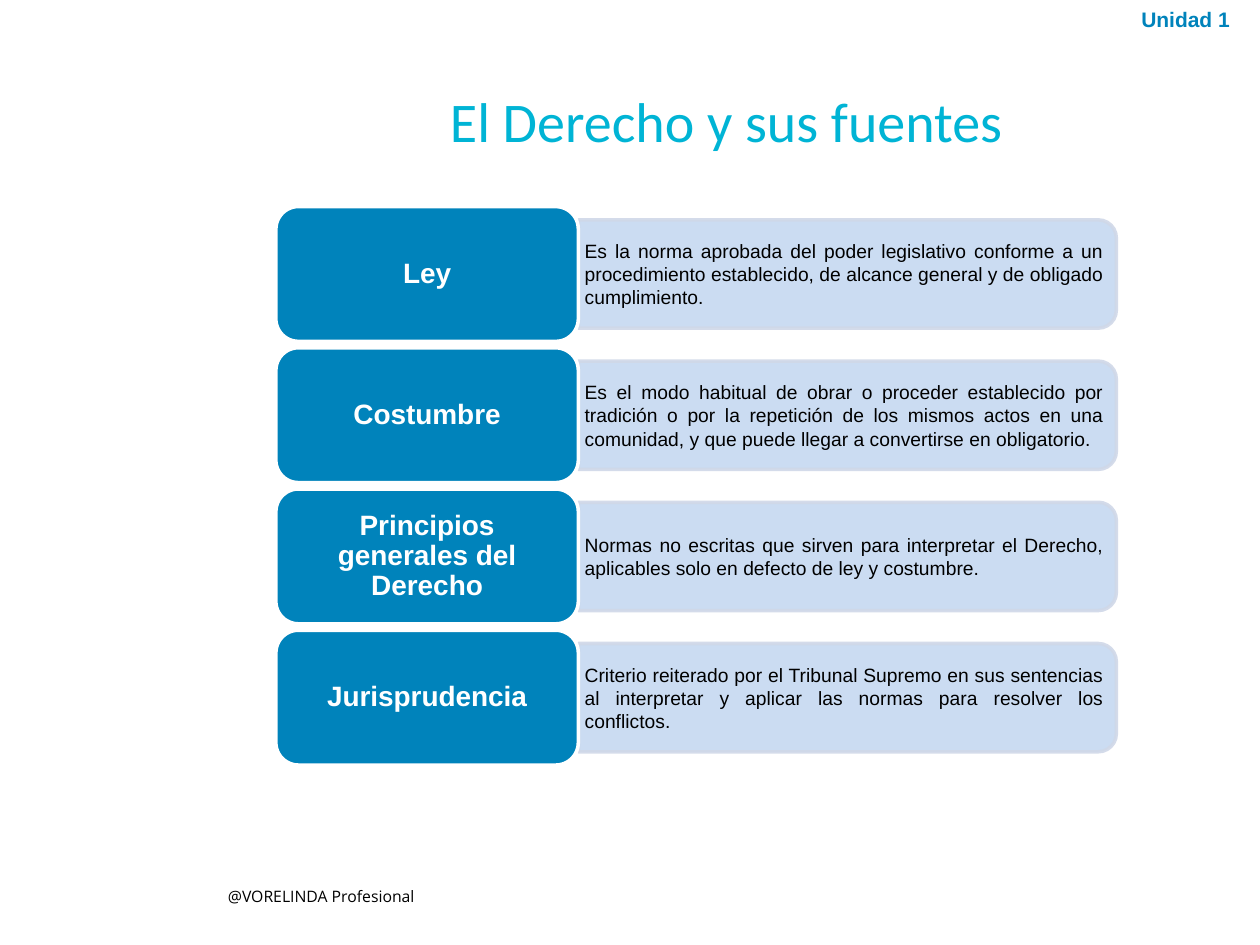
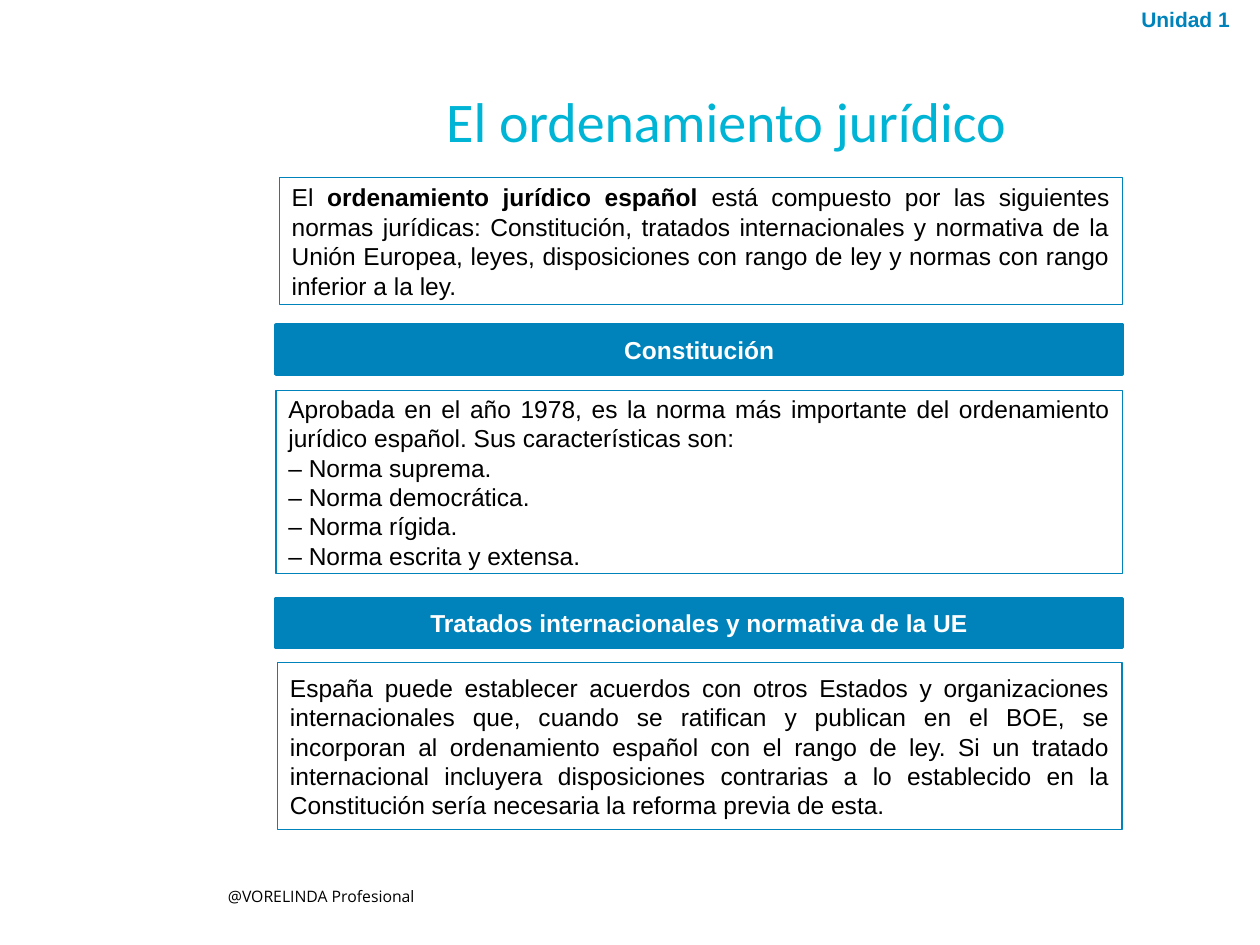
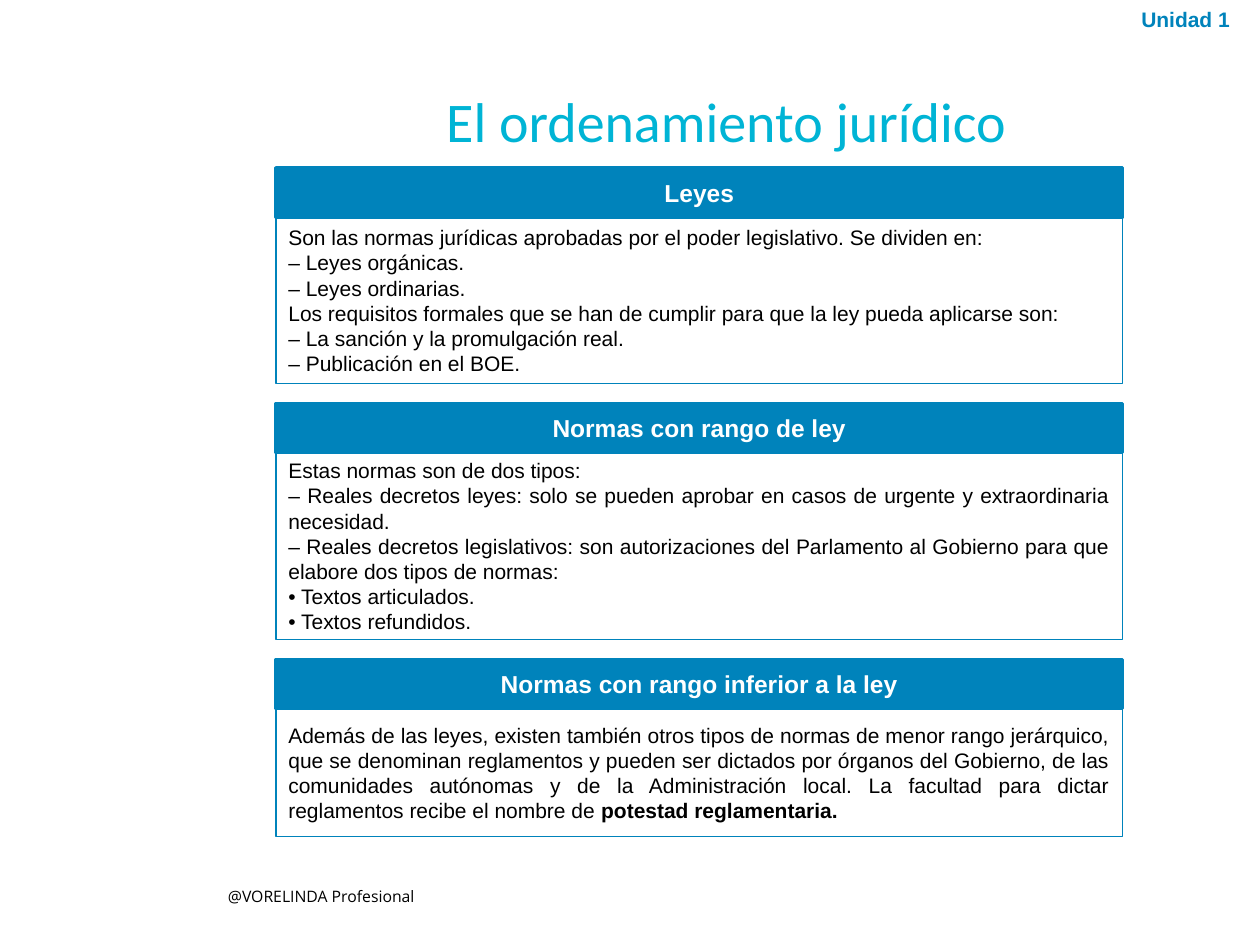
"""Build three slides on the sources of law and the Spanish legal system."""

from dataclasses import dataclass
from typing import Any

from lxml import etree
from pptx import Presentation
from pptx.dml.color import RGBColor
from pptx.enum.shapes import MSO_SHAPE
from pptx.enum.text import MSO_ANCHOR, PP_ALIGN
from pptx.oxml.ns import qn
from pptx.util import Pt

LEFT, CENTER, JUSTIFY = PP_ALIGN.LEFT, PP_ALIGN.CENTER, PP_ALIGN.JUSTIFY
TOP, MIDDLE = MSO_ANCHOR.TOP, MSO_ANCHOR.MIDDLE
RECTANGLE = MSO_SHAPE.RECTANGLE
ROUNDED_RECTANGLE = MSO_SHAPE.ROUNDED_RECTANGLE
TWO_ROUND_CORNERS = MSO_SHAPE.ROUND_2_SAME_RECTANGLE

BLUE, CYAN, WHITE, BLACK = "0083BB", "00B4D5", "FFFFFF", "000000"
PALE_BLUE, PALE_GREY = "C6D9F1", "D0D8E8"
BLANK_LAYOUT = 6
BODY_LEFT, BODY_WIDTH = 157.7, 483.8
HEADING_HEIGHT = 28.1


@dataclass(frozen=True)
class Box:
    """Position and size in points."""

    left: float
    top: float
    width: float
    height: float

    def lengths(self) -> tuple[Pt, Pt, Pt, Pt]:
        """Return the four lengths in the order python-pptx expects."""
        return Pt(self.left), Pt(self.top), Pt(self.width), Pt(self.height)


@dataclass(frozen=True)
class TextStyle:
    """Look of a text; double asterisks in the text switch bold."""

    size: float
    color: str = BLACK
    font: str = "Arial"
    bold: bool = False
    alignment: Any = JUSTIFY
    anchor: Any = MIDDLE
    margins: tuple[float, float] = (7.2, 3.6)
    line_spacing: float = 1.0


@dataclass(frozen=True)
class ShapeStyle:
    """Fill, outline and turn of a shape."""

    line: str
    line_width: float
    fill: str | None = None
    opacity: int = 100
    rotation: float = 0


@dataclass(frozen=True)
class Source:
    """A source of law and its definition."""

    name: str
    definition: str


@dataclass(frozen=True)
class Panel:
    """An outlined text with an optional heading bar above it."""

    box: Box
    paragraphs: tuple[str, ...]
    heading: str = ""
    heading_top: float = 0


@dataclass(frozen=True)
class PanelSlide:
    """A slide made of panels."""

    title: str
    text_size: float
    panels: tuple[Panel, ...]


UNIT_TEXT = TextStyle(12, BLUE, bold=True, alignment=LEFT, anchor=TOP)
FOOTER_TEXT = TextStyle(9, font="Open Sans", alignment=LEFT, anchor=TOP)
TITLE_TEXT = TextStyle(32, CYAN, "Calibri", alignment=CENTER, margins=(0, 0))
HEADING_TEXT = TextStyle(14, WHITE, bold=True, alignment=CENTER)
NAME_TEXT = TextStyle(16, WHITE, bold=True, alignment=CENTER, margins=(8.8, 5.8), line_spacing=0.9)
DEFINITION_TEXT = TextStyle(11, margins=(3.6, 1.44))

NAME_SHAPE = ShapeStyle(WHITE, 2, BLUE)
DEFINITION_SHAPE = ShapeStyle(PALE_GREY, 2, PALE_BLUE, opacity=90, rotation=90)
HEADING_SHAPE = ShapeStyle(BLUE, 2, BLUE)
PANEL_SHAPE = ShapeStyle(BLUE, 0.75)

SHARED_TEXTS = (
    ("Unidad 1", Box(645.1, 0, 74.9, 21.6), UNIT_TEXT),
    ("@VORELINDA Profesional", Box(123.1, 503.3, 138.2, 18), FOOTER_TEXT),
)
TITLE_BOX = Box(110.2, 49, 609.8, 38.9)

SOURCES_TITLE = "El Derecho y sus fuentes"
SOURCES_TOP, SOURCE_PITCH = 118.1, 80.7
NAME_WIDTH, NAME_HEIGHT = 172.8, 77
DEFINITION_WIDTH, DEFINITION_HEIGHT = 307.4, 61.9
SOURCES = (
    Source(
        "Ley",
        "Es la norma aprobada del poder legislativo conforme a un procedimiento "
        "establecido, de alcance general y de obligado cumplimiento.",
    ),
    Source(
        "Costumbre",
        "Es el modo habitual de obrar o proceder establecido por tradición o por la "
        "repetición de los mismos actos en una comunidad, y que puede llegar a "
        "convertirse en obligatorio.",
    ),
    Source(
        "Principios generales del Derecho",
        "Normas no escritas que sirven para interpretar el Derecho, aplicables solo "
        "en defecto de ley y costumbre.",
    ),
    Source(
        "Jurisprudencia",
        "Criterio reiterado por el Tribunal Supremo en sus sentencias al interpretar "
        "y aplicar las normas para resolver los conflictos.",
    ),
)

SYSTEM_TITLE = "El ordenamiento jurídico"
PANEL_SLIDES = (
    PanelSlide(SYSTEM_TITLE, 14, (
        Panel(
            Box(159.6, 101.5, 481.7, 72.7),
            (
                "El **ordenamiento jurídico español** está compuesto por las siguientes "
                "normas jurídicas: Constitución, tratados internacionales y normativa de "
                "la Unión Europea, leyes, disposiciones con rango de ley y normas con "
                "rango inferior a la ley.",
            ),
        ),
        Panel(
            Box(BODY_LEFT, 223.2, BODY_WIDTH, 104.4),
            (
                "Aprobada en el año 1978, es la norma más importante del ordenamiento "
                "jurídico español. Sus características son:",
                "– Norma suprema.",
                "– Norma democrática.",
                "– Norma rígida.",
                "– Norma escrita y extensa.",
            ),
            "Constitución", 185.8,
        ),
        Panel(
            Box(158.6, 378.7, 482.6, 95.4),
            (
                "España puede establecer acuerdos con otros Estados y organizaciones "
                "internacionales que, cuando se ratifican y publican en el BOE, se "
                "incorporan al ordenamiento español con el rango de ley. Si un tratado "
                "internacional incluyera disposiciones contrarias a lo establecido en la "
                "Constitución sería necesaria la reforma previa de esta.",
            ),
            "Tratados internacionales y normativa de la UE", 342,
        ),
    )),
    PanelSlide(SYSTEM_TITLE, 12, (
        Panel(
            Box(BODY_LEFT, 123.8, BODY_WIDTH, 95.5),
            (
                "Son las normas jurídicas aprobadas por el poder legislativo. Se dividen en:",
                "– Leyes orgánicas.",
                "– Leyes ordinarias.",
                "Los requisitos formales que se han de cumplir para que la ley pueda "
                "aplicarse son:",
                "– La sanción y la promulgación real.",
                "– Publicación en el BOE.",
            ),
            "Leyes", 95.8,
        ),
        Panel(
            Box(BODY_LEFT, 258.6, BODY_WIDTH, 106.8),
            (
                "Estas normas son de dos tipos:",
                "– Reales decretos leyes: solo se pueden aprobar en casos de urgente y "
                "extraordinaria necesidad.",
                "– Reales decretos legislativos: son autorizaciones del Parlamento al "
                "Gobierno para que elabore dos tipos de normas:",
                "• Textos articulados.",
                "• Textos refundidos.",
            ),
            "Normas con rango de ley", 230.5,
        ),
        Panel(
            Box(BODY_LEFT, 405, BODY_WIDTH, 73.2),
            (
                "Además de las leyes, existen también otros tipos de normas de menor rango "
                "jerárquico, que se denominan reglamentos y pueden ser dictados por órganos "
                "del Gobierno, de las comunidades autónomas y de la Administración local. "
                "La facultad para dictar reglamentos recibe el nombre de **potestad "
                "reglamentaria.**",
            ),
            "Normas con rango inferior a la ley", 376.8,
        ),
    )),
)


def color(value: str) -> RGBColor:
    """Turn a hex string into a colour."""
    return RGBColor.from_string(value)


def set_values(target: Any, values: dict[str, Any]) -> None:
    """Set each named attribute on the target."""
    for name, value in values.items():
        setattr(target, name, value)


def write_text(shape: Any, paragraphs: tuple[str, ...], style: TextStyle) -> None:
    """Write the paragraphs into the shape."""
    frame = shape.text_frame
    horizontal, vertical = map(Pt, style.margins)
    set_values(frame, {
        "word_wrap": True,
        "vertical_anchor": style.anchor,
        "margin_left": horizontal,
        "margin_right": horizontal,
        "margin_top": vertical,
        "margin_bottom": vertical,
    })
    for index, text in enumerate(paragraphs):
        paragraph = frame.add_paragraph() if index else frame.paragraphs[0]
        set_values(paragraph, {"alignment": style.alignment, "line_spacing": style.line_spacing})
        for part_index, part in enumerate(text.split("**")):
            if part:
                run = paragraph.add_run()
                run.text = part
                set_values(run.font, {
                    "name": style.font,
                    "size": Pt(style.size),
                    "bold": style.bold or part_index % 2 == 1,
                })
                run.font.color.rgb = color(style.color)


def add_text(slide: Any, text: str, box: Box, style: TextStyle) -> None:
    """Add a text box of one paragraph."""
    write_text(slide.shapes.add_textbox(*box.lengths()), (text,), style)


def add_shape(slide: Any, preset: Any, box: Box, style: ShapeStyle) -> Any:
    """Add a preset shape and return it."""
    shape = slide.shapes.add_shape(preset, *box.lengths())
    shape.shadow.inherit = False
    shape.rotation = style.rotation
    if style.fill:
        shape.fill.solid()
        shape.fill.fore_color.rgb = color(style.fill)
    else:
        shape.fill.background()
    shape.line.color.rgb = color(style.line)
    shape.line.width = Pt(style.line_width)
    if style.opacity < 100:
        for element in shape.element.spPr.iter(qn("a:srgbClr")):
            etree.SubElement(element, qn("a:alpha"), val=str(style.opacity * 1000))
    return shape


def add_slide(presentation: Any, title: str) -> Any:
    """Add a slide with its title and the shared texts."""
    slide = presentation.slides.add_slide(presentation.slide_layouts[BLANK_LAYOUT])
    for text, box, style in SHARED_TEXTS:
        add_text(slide, text, box, style)
    add_text(slide, title, TITLE_BOX, TITLE_TEXT)
    return slide


def add_source(slide: Any, source: Source, top: float) -> None:
    """Add one source: its definition band and its name tile."""
    band_left = BODY_LEFT + NAME_WIDTH
    middle = top + NAME_HEIGHT / 2
    upright_band = Box(
        band_left + (DEFINITION_WIDTH - DEFINITION_HEIGHT) / 2,
        middle - DEFINITION_WIDTH / 2,
        DEFINITION_HEIGHT,
        DEFINITION_WIDTH,
    )
    add_shape(slide, TWO_ROUND_CORNERS, upright_band, DEFINITION_SHAPE)
    text_box = Box(band_left, middle - 27.7, DEFINITION_WIDTH - 3.6, 55.4)
    add_text(slide, source.definition, text_box, DEFINITION_TEXT)
    name_box = Box(BODY_LEFT, top, NAME_WIDTH, NAME_HEIGHT)
    tile = add_shape(slide, ROUNDED_RECTANGLE, name_box, NAME_SHAPE)
    write_text(tile, (source.name,), NAME_TEXT)


def add_panel(slide: Any, panel: Panel, text_size: float) -> None:
    """Add a panel and, if it has one, its heading bar."""
    if panel.heading:
        heading_box = Box(BODY_LEFT, panel.heading_top, BODY_WIDTH, HEADING_HEIGHT)
        bar = add_shape(slide, RECTANGLE, heading_box, HEADING_SHAPE)
        write_text(bar, (panel.heading,), HEADING_TEXT)
    outline = add_shape(slide, RECTANGLE, panel.box, PANEL_SHAPE)
    write_text(outline, panel.paragraphs, TextStyle(text_size))


def main() -> None:
    """Build and save the presentation."""
    presentation = Presentation()
    set_values(presentation, {"slide_width": Pt(720), "slide_height": Pt(540)})
    slide = add_slide(presentation, SOURCES_TITLE)
    for index, source in enumerate(SOURCES):
        add_source(slide, source, SOURCES_TOP + index * SOURCE_PITCH)
    for content in PANEL_SLIDES:
        slide = add_slide(presentation, content.title)
        for panel in content.panels:
            add_panel(slide, panel, content.text_size)
    presentation.save("out.pptx")


if __name__ == "__main__":
    main()
